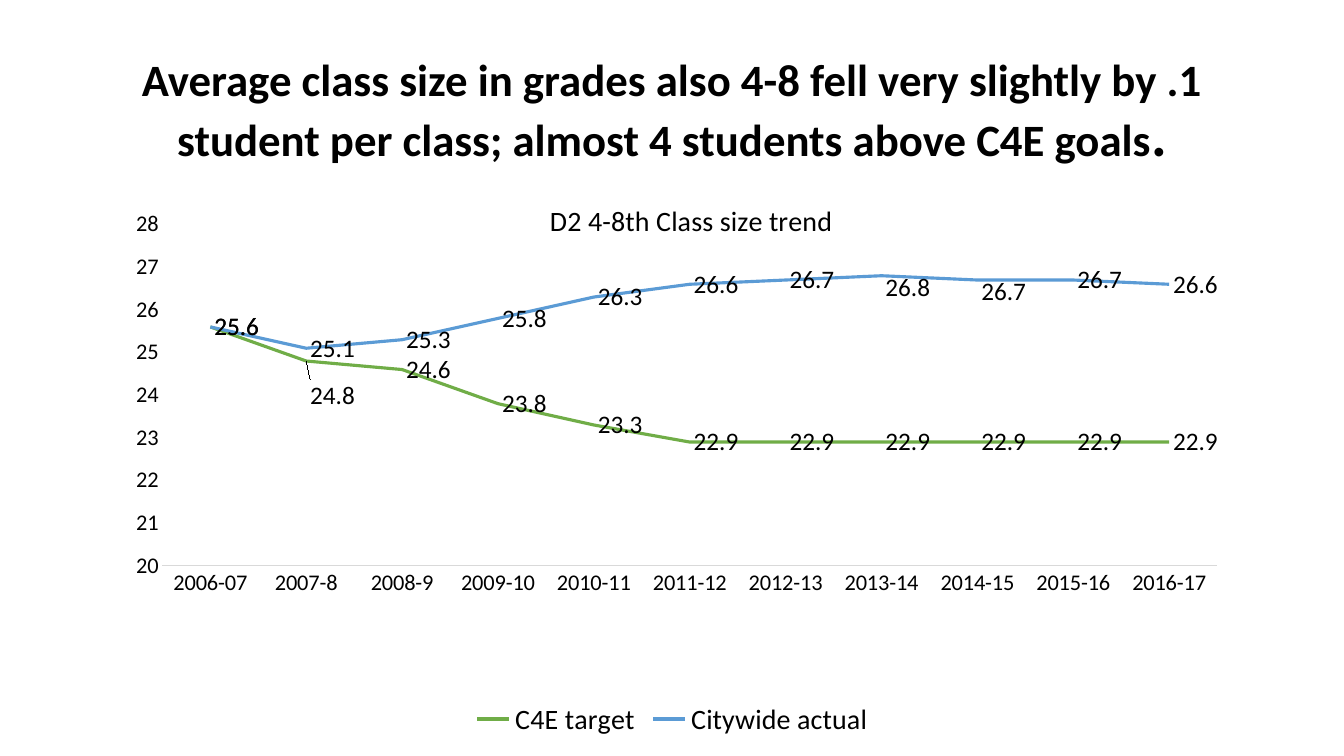
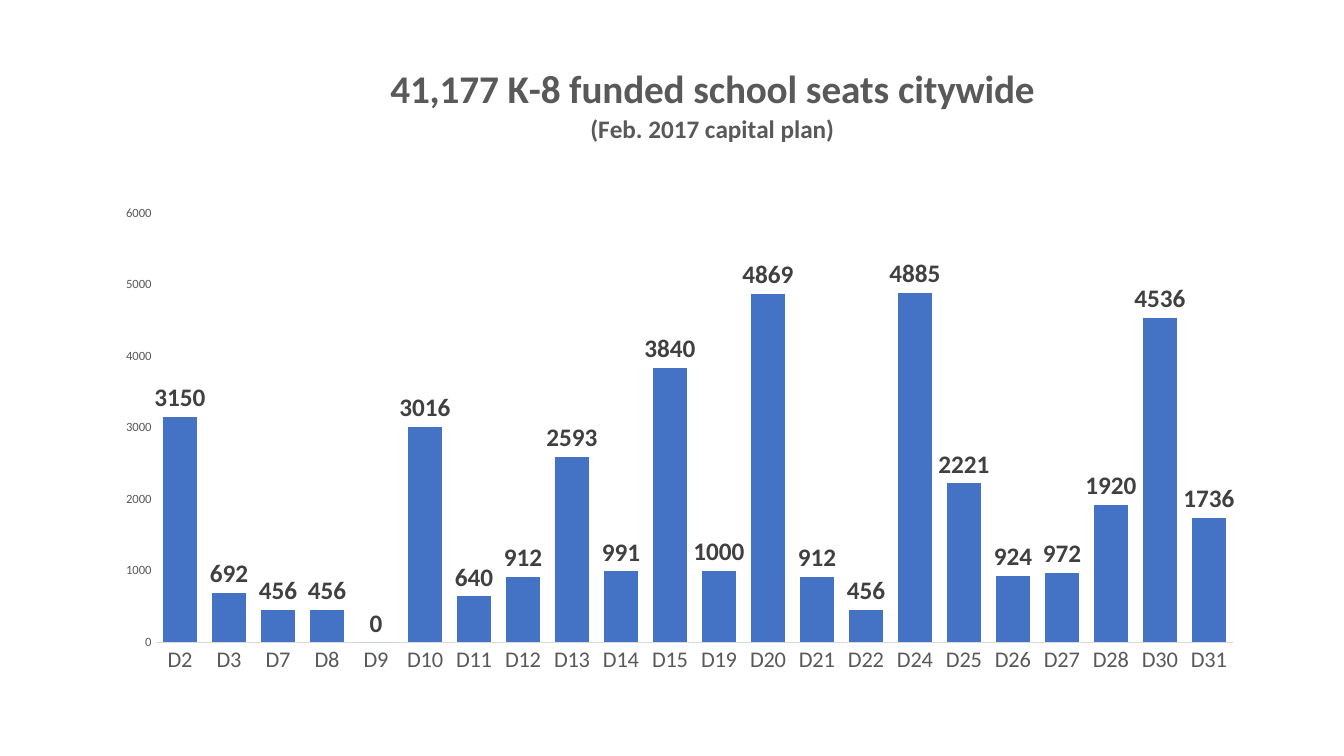
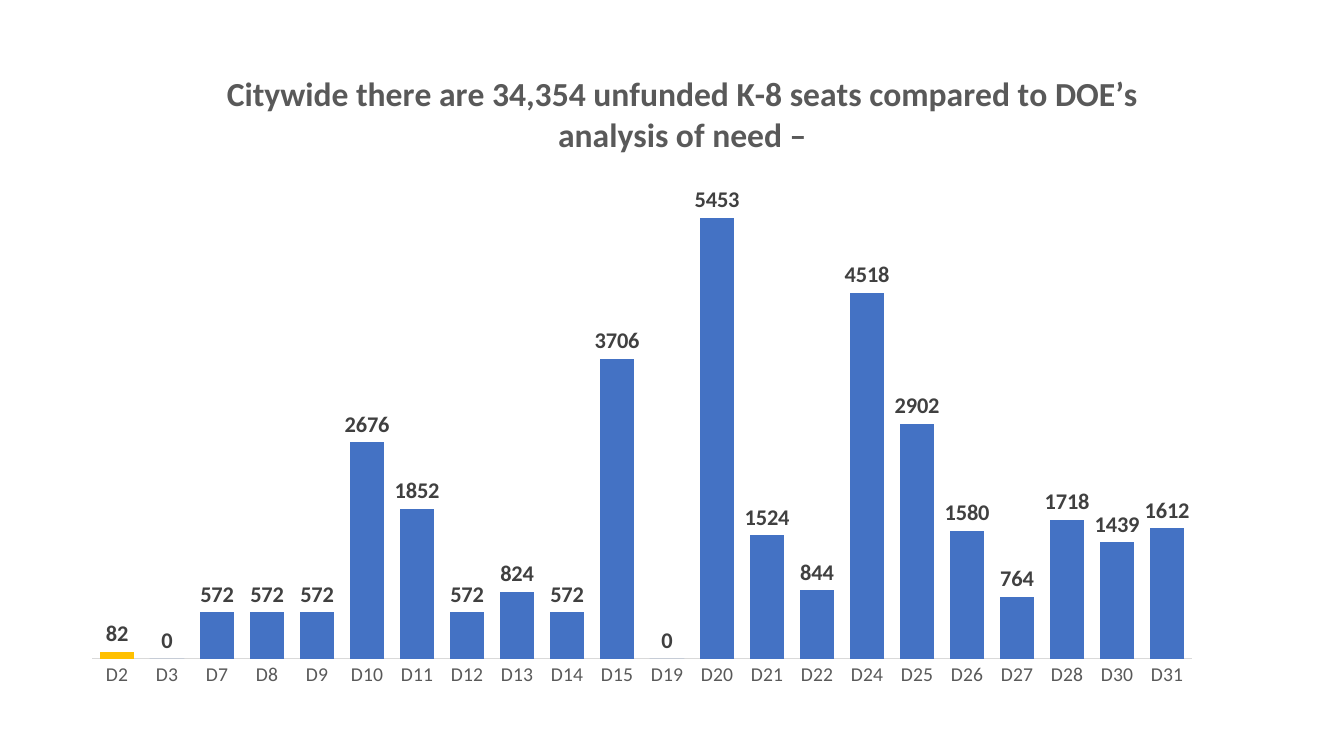
from dataclasses import dataclass

from lxml import etree
from pptx import Presentation
from pptx.chart.data import CategoryChartData
from pptx.dml.color import RGBColor
from pptx.enum.chart import XL_CHART_TYPE, XL_LABEL_POSITION, XL_LEGEND_POSITION, XL_TICK_MARK
from pptx.enum.text import MSO_ANCHOR, MSO_AUTO_SIZE, PP_ALIGN
from pptx.oxml.ns import qn
from pptx.util import Cm, Pt

LINE, COLUMN = XL_CHART_TYPE.LINE, XL_CHART_TYPE.COLUMN_CLUSTERED
RIGHT, OUTSIDE = XL_LABEL_POSITION.RIGHT, XL_LABEL_POSITION.OUTSIDE_END
BOTTOM, NO_TICK = XL_LEGEND_POSITION.BOTTOM, XL_TICK_MARK.NONE
CENTER, MIDDLE, FIXED = PP_ALIGN.CENTER, MSO_ANCHOR.MIDDLE, MSO_AUTO_SIZE.NONE


@dataclass(frozen=True)
class Theme:
    font: str = "Calibri"
    black: str = "000000"
    grey: str = "595959"
    label: str = "404040"
    rule: str = "D9D9D9"
    green: str = "70AD47"
    sky: str = "5B9BD5"
    blue: str = "4472C4"
    amber: str = "FFC000"
    headline: int = 32
    headline_stop: int = 42
    trend_title: int = 20
    trend_axis: int = 16
    trend_label: int = 18


THEME = Theme()


def style(font, size, color, bold=False):
    font.name, font.size, font.bold = THEME.font, Pt(size), bold
    font.color.rgb = RGBColor.from_string(color)


def place(parent, index, inner=False, **fractions):
    """Give a chart part a manual layout, as fractions of the chart."""
    for old in parent.findall(qn("c:layout")):
        parent.remove(old)
    layout = etree.Element(qn("c:layout"))
    manual = etree.SubElement(layout, qn("c:manualLayout"))
    if inner:
        etree.SubElement(manual, qn("c:layoutTarget")).set("val", "inner")
    if parent.tag != qn("c:dLbl"):
        for mode in ("c:xMode", "c:yMode"):
            etree.SubElement(manual, qn(mode)).set("val", "edge")
    for key, value in fractions.items():
        etree.SubElement(manual, qn(f"c:{key}")).set("val", str(value))
    parent.insert(index, layout)


# Content
YEARS = ["2006-07", "2007-8", "2008-9", "2009-10", "2010-11", "2011-12",
         "2012-13", "2013-14", "2014-15", "2015-16", "2016-17"]
DISTRICTS = [f"D{n}" for n in (2, 3, 7, 8, 9, 10, 11, 12, 13, 14, 15, 19, 20,
                               21, 22, 24, 25, 26, 27, 28, 30, 31)]
CHARTS = [
    dict(kind=LINE, box=(2.34, 4.37, 29.21, 14.33), categories=YEARS,
         title=[("D2 4-8th Class size trend", THEME.trend_title)],
         title_color=THEME.black, title_bold=False, title_at=(0.39, 0.04),
         plot=(0.06, 0.09, 0.91, 0.6), limits=(20, 28, 1),
         axis_sizes=(THEME.trend_axis, THEME.trend_axis), axis_color=THEME.black,
         label_size=THEME.trend_label, label_color=THEME.black,
         series=[("C4E target", THEME.green,
                  [25.6, 24.8, 24.6, 23.8, 23.3] + [22.9] * 6, {1: 0.06}),
                 ("Citywide actual", THEME.sky,
                  [25.6, 25.1, 25.3, 25.8, 26.3, 26.6, 26.7, 26.8, 26.7, 26.7, 26.6],
                  {7: 0.02, 8: 0.02})]),
    dict(kind=COLUMN, box=(2.46, 1.4, 29.21, 15.9), categories=DISTRICTS,
         title=[("41,177 K-8 funded school seats citywide", 28),
                ("(Feb. 2017 capital plan)", 18)],
         title_color=THEME.grey, title_bold=True, title_at=(0.25, 0.01),
         plot=(0.05, 0.25, 0.93, 0.68), limits=(0, 6000, 1000),
         axis_sizes=(16, 9), axis_color=THEME.grey, overlap=-42, highlight=None,
         label_size=18, label_color=THEME.label,
         series=[("Funded seats", THEME.blue,
                  [3150, 692, 456, 456, 0, 3016, 640, 912, 2593, 991, 3840, 1000, 4869,
                   912, 456, 4885, 2221, 924, 972, 1920, 4536, 1736], {})]),
    dict(kind=COLUMN, box=(1.14, 1.47, 29.49, 16.1), categories=DISTRICTS,
         title=[("Citywide there are 34,354 unfunded K-8 seats compared to DOE’s "
                 "analysis of need –", 24)],
         title_color=THEME.grey, title_bold=True, title_at=(0.15, 0.01),
         plot=(0.04, 0.18, 0.94, 0.76), limits=(0, 6000, 1000),
         axis_sizes=(14, None), axis_color=THEME.grey, overlap=4, highlight=0,
         label_size=16, label_color=THEME.label,
         series=[("Unfunded seats", THEME.blue,
                  [82, 0, 572, 572, 572, 2676, 1852, 572, 824, 572, 3706, 0, 5453,
                   1524, 844, 4518, 2902, 1580, 764, 1718, 1439, 1612], {})]),
]

prs = Presentation()
prs.slide_width, prs.slide_height = Cm(33.87), Cm(19.05)
TITLE_ONLY, BLANK = prs.slide_layouts[5], prs.slide_layouts[6]

for item in CHARTS:
    is_trend = item["kind"] == LINE
    slide = prs.slides.add_slide(TITLE_ONLY if is_trend else BLANK)

    # Headline
    if is_trend:
        headline = slide.shapes.title
        headline.left, headline.top = Cm(2.34), Cm(1.02)
        headline.width, headline.height = Cm(29.21), Cm(3.68)
        frame = headline.text_frame
        frame.auto_size, frame.vertical_anchor = FIXED, MIDDLE
        sentence = frame.paragraphs[0]
        sentence.alignment, sentence.line_spacing = CENTER, 0.9
        style(sentence.font, THEME.headline, THEME.black, True)
        sentence.add_run().text = ("Average class size in grades also 4-8 fell very slightly by .1 "
                                   "student per class; almost 4 students above C4E goals")
        stop = sentence.add_run()
        stop.text, stop.font.size = ".", Pt(THEME.headline_stop)

    # Chart and its data
    data = CategoryChartData()
    data.categories = item["categories"]
    for name, _, values, _ in item["series"]:
        data.add_series(name, values)
    box = [Cm(length) for length in item["box"]]
    chart = slide.shapes.add_chart(item["kind"], *box, data).chart
    style(chart.font, item["label_size"], THEME.black)

    # Chart title
    chart.has_title = True
    title_frame = chart.chart_title.text_frame
    for number, (text, size) in enumerate(item["title"]):
        line = title_frame.add_paragraph() if number else title_frame.paragraphs[0]
        line.text = text
        style(line.font, size, item["title_color"], item["title_bold"])
        style(line.runs[0].font, size, item["title_color"], item["title_bold"])
    title_x, title_y = item["title_at"]
    place(chart.chart_title._element, 1, x=title_x, y=title_y)
    chart.chart_title.include_in_layout = False

    # Plot area and legend
    plot_x, plot_y, plot_w, plot_h = item["plot"]
    place(chart._chartSpace.chart.plotArea, 0, True, x=plot_x, y=plot_y, w=plot_w, h=plot_h)
    chart.has_legend = is_trend
    if is_trend:
        chart.legend.position, chart.legend.include_in_layout = BOTTOM, False
        style(chart.legend.font, THEME.trend_title, THEME.black)

    # Axes
    for axis, size in zip((chart.category_axis, chart.value_axis), item["axis_sizes"]):
        axis.has_major_gridlines = False
        axis.major_tick_mark = axis.minor_tick_mark = NO_TICK
        axis.visible = size is not None
        if size:
            style(axis.tick_labels.font, size, item["axis_color"])
    rule = chart.category_axis.format.line
    rule.color.rgb, rule.width = RGBColor.from_string(THEME.rule), Pt(0.75)
    scale = chart.value_axis
    scale.minimum_scale, scale.maximum_scale, scale.major_unit = item["limits"]
    scale.format.line.fill.background()
    scale.tick_labels.number_format, scale.tick_labels.number_format_is_linked = "0", False

    # Series and value labels
    plot = chart.plots[0]
    plot.vary_by_categories = False
    if not is_trend:
        plot.gap_width, plot.overlap = 44, item["overlap"]
    for series, (_, color, _, drops) in zip(plot.series, item["series"]):
        rgb = RGBColor.from_string(color)
        if is_trend:
            series.smooth = False
            series.format.line.color.rgb, series.format.line.width = rgb, Pt(2.25)
        else:
            series.format.fill.solid()
            series.format.fill.fore_color.rgb = rgb
            if item["highlight"] is not None:
                accent = series.points[item["highlight"]].format.fill
                accent.solid()
                accent.fore_color.rgb = RGBColor.from_string(THEME.amber)
        labels = series.data_labels
        labels.show_value, labels.position = True, RIGHT if is_trend else OUTSIDE
        labels.number_format, labels.number_format_is_linked = "0.0" if is_trend else "0", False
        style(labels.font, item["label_size"], item["label_color"], not is_trend)
        for index, drop in drops.items():
            moved = series.points[index].data_label
            style(moved.font, item["label_size"], item["label_color"])
            moved.position = RIGHT
            place(labels._element.find(f"{qn('c:dLbl')}[{list(drops).index(index) + 1}]"),
                  1, x=0, y=drop)

prs.save("out.pptx")
